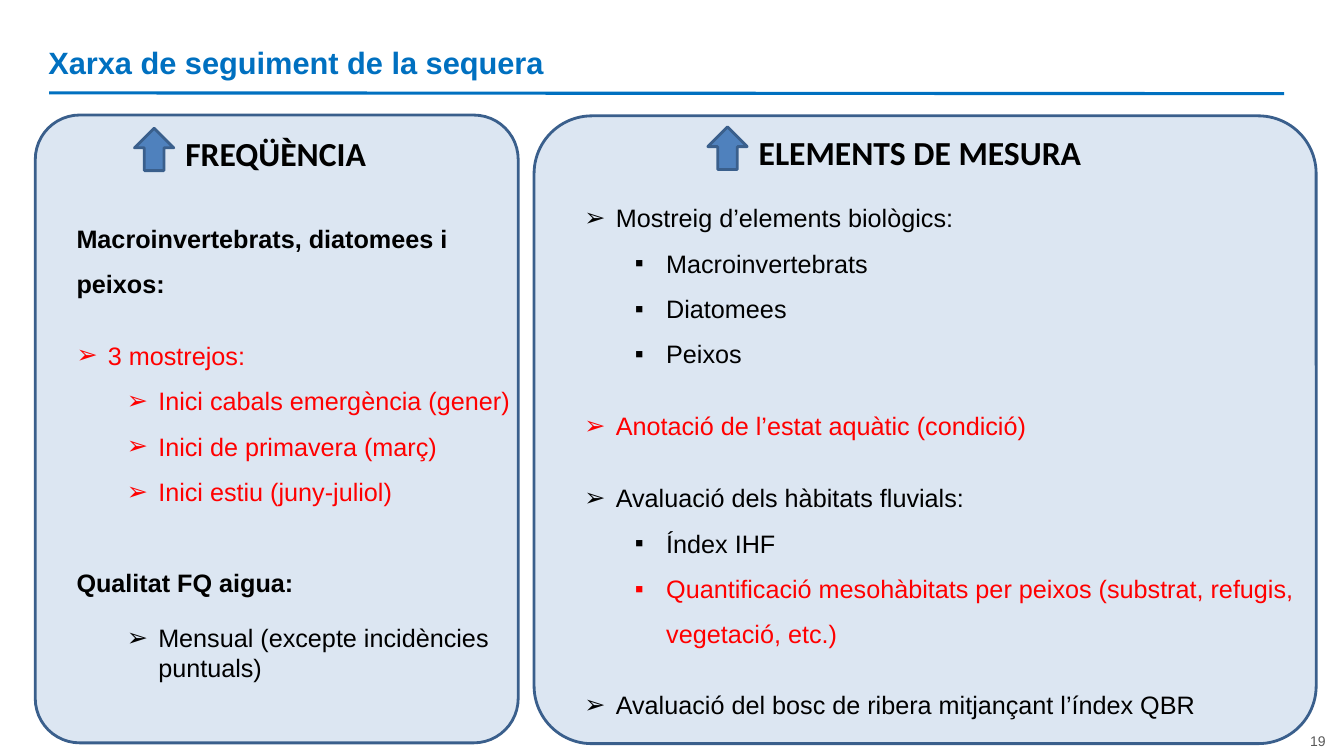
"""Build the slide on the drought monitoring network."""
from dataclasses import dataclass

from lxml import etree
from pptx import Presentation
from pptx.dml.color import RGBColor
from pptx.enum.shapes import MSO_CONNECTOR, MSO_SHAPE
from pptx.enum.text import PP_ALIGN
from pptx.oxml.ns import qn
from pptx.slide import Slide
from pptx.text.text import TextFrame, _Paragraph
from pptx.util import Cm, Pt

ROUNDED = MSO_SHAPE.ROUNDED_RECTANGLE
UP_ARROW = MSO_SHAPE.UP_ARROW
STRAIGHT = MSO_CONNECTOR.STRAIGHT
LEFT, RIGHT = PP_ALIGN.LEFT, PP_ALIGN.RIGHT

COLOURS = {
    "title": "0070C0",
    "panel": "DCE6F2",
    "outline": "3A5F8C",
    "arrow": "4F81BD",
    "text": "000000",
    "new": "FF0000",
    "number": "595959",
}
ARROW_BULLET, SQUARE_BULLET = "➢", "▪"
HANGING = 0.79
LEVEL_STEP = 1.27


@dataclass(frozen=True)
class Box:
    left: float
    top: float
    width: float
    height: float

    def lengths(self) -> tuple[Cm, Cm, Cm, Cm]:
        return Cm(self.left), Cm(self.top), Cm(self.width), Cm(self.height)


@dataclass(frozen=True)
class Item:
    text: str
    level: int = 0
    bullet: str = ARROW_BULLET
    colour: str = "text"
    bold: bool = False
    before: float = 0
    spacing: float = 1.5


@dataclass(frozen=True)
class Panel:
    frame: Box
    heading: str
    heading_box: Box
    body_box: Box
    items: tuple[Item, ...]


MEASURES = Panel(
    Box(13.46, 2.92, 19.71, 15.82),
    "ELEMENTS DE MESURA",
    Box(18.87, 3.2, 8.71, 1.27),
    Box(14.48, 4.6, 19.1, 13.89),
    (
        Item("Mostreig d’elements biològics:"),
        Item("Macroinvertebrats", 1, SQUARE_BULLET),
        Item("Diatomees", 1, SQUARE_BULLET),
        Item("Peixos", 1, SQUARE_BULLET),
        Item("Anotació de l’estat aquàtic (condició)", colour="new", before=19),
        Item("Avaluació dels hàbitats fluvials:", before=19),
        Item("Índex IHF", 1, SQUARE_BULLET),
        Item("Quantificació mesohàbitats per peixos (substrat, refugis, vegetació, etc.)",
             1, SQUARE_BULLET, "new"),
        Item("Avaluació del bosc de ribera mitjançant l’índex QBR", before=18),
    ),
)
FREQUENCY = Panel(
    Box(0.89, 2.9, 12.17, 15.82),
    "FREQÜÈNCIA",
    Box(4.42, 3.23, 5.11, 1.27),
    Box(1.68, 5.11, 11.76, 12.34),
    (
        Item("Macroinvertebrats, diatomees i peixos:", bullet="", bold=True),
        Item("3 mostrejos:", colour="new", before=19),
        Item("Inici cabals emergència (gener)", 1, colour="new"),
        Item("Inici de primavera (març)", 1, colour="new"),
        Item("Inici estiu (juny-juliol)", 1, colour="new"),
        Item("Qualitat FQ aigua:", bullet="", bold=True, before=32.5),
        Item("Mensual (excepte incidències puntuals)", 1, before=18, spacing=1),
    ),
)


def rgb(colour: str) -> RGBColor:
    return RGBColor.from_string(COLOURS[colour])


def style(paragraph: _Paragraph, size: float, colour: str, bold: bool,
          font_name: str = "Arial") -> None:
    for run in paragraph.runs:
        run.font.name = font_name
        run.font.size = Pt(size)
        run.font.bold = bold
        run.font.color.rgb = rgb(colour)


def add_frame(slide: Slide, box: Box, wrap: bool = True) -> TextFrame:
    frame = slide.shapes.add_textbox(*box.lengths()).text_frame
    frame.word_wrap = wrap
    return frame


def add_label(slide: Slide, box: Box, text: str, size: float, colour: str, bold: bool = True,
              font_name: str = "Arial", wrap: bool = True, align: PP_ALIGN = LEFT) -> None:
    frame = add_frame(slide, box, wrap)
    frame.text = text
    frame.paragraphs[0].alignment = align
    style(frame.paragraphs[0], size, colour, bold, font_name)


def add_outlined(slide: Slide, preset: MSO_SHAPE, box: Box, fill: str, corner: float) -> None:
    outlined = slide.shapes.add_shape(preset, *box.lengths())
    outlined.adjustments[0] = corner
    outlined.shadow.inherit = False
    outlined.fill.solid()
    outlined.fill.fore_color.rgb = rgb(fill)
    outlined.line.color.rgb = rgb("outline")
    outlined.line.width = Pt(2)


def add_bullet(paragraph: _Paragraph, item: Item) -> None:
    properties = paragraph._p.get_or_add_pPr()
    properties.set("marL", str(Cm(HANGING + item.level * LEVEL_STEP)))
    properties.set("indent", str(-Cm(HANGING)))
    etree.SubElement(properties, qn("a:buFont"), typeface="Arial")
    etree.SubElement(properties, qn("a:buChar"), char=item.bullet)


def add_items(slide: Slide, box: Box, items: tuple[Item, ...]) -> None:
    frame = add_frame(slide, box)
    for index, item in enumerate(items):
        paragraph = frame.add_paragraph() if index else frame.paragraphs[0]
        paragraph.text = item.text
        paragraph.level = item.level
        paragraph.line_spacing = item.spacing
        paragraph.space_before = Pt(item.before)
        if item.bullet:
            add_bullet(paragraph, item)
        style(paragraph, 18, item.colour, item.bold)


def add_panel(slide: Slide, panel: Panel) -> None:
    add_outlined(slide, ROUNDED, panel.frame, "panel", 0.092)
    add_items(slide, panel.body_box, panel.items)
    add_label(slide, panel.heading_box, panel.heading, 24, "text", font_name="Calibri", wrap=False)
    arrow_box = Box(panel.heading_box.left - 1.03, panel.heading_box.top, 0.99, 1.07)
    add_outlined(slide, UP_ARROW, arrow_box, "arrow", 0.5)


def add_rule(slide: Slide) -> None:
    rule = slide.shapes.add_connector(STRAIGHT, Cm(1.24), Cm(2.34), Cm(32.36), Cm(2.36))
    rule.line.color.rgb = rgb("title")
    rule.line.width = Pt(2.25)
    etree.SubElement(rule._element.spPr, qn("a:effectLst"))


def main() -> None:
    deck = Presentation()
    deck.slide_width, deck.slide_height = Cm(33.87), Cm(19.05)
    slide = deck.slides.add_slide(deck.slide_layouts[6])
    add_rule(slide)
    add_label(slide, Box(32.16, 18.34, 1.5, 0.69), "19", 10, "number", bold=False, align=RIGHT)
    add_label(slide, Box(0.97, 0.97, 31.04, 1.4), "Xarxa de seguiment de la sequera", 22, "title")
    for panel in (MEASURES, FREQUENCY):
        add_panel(slide, panel)
    deck.save("out.pptx")


if __name__ == "__main__":
    main()
